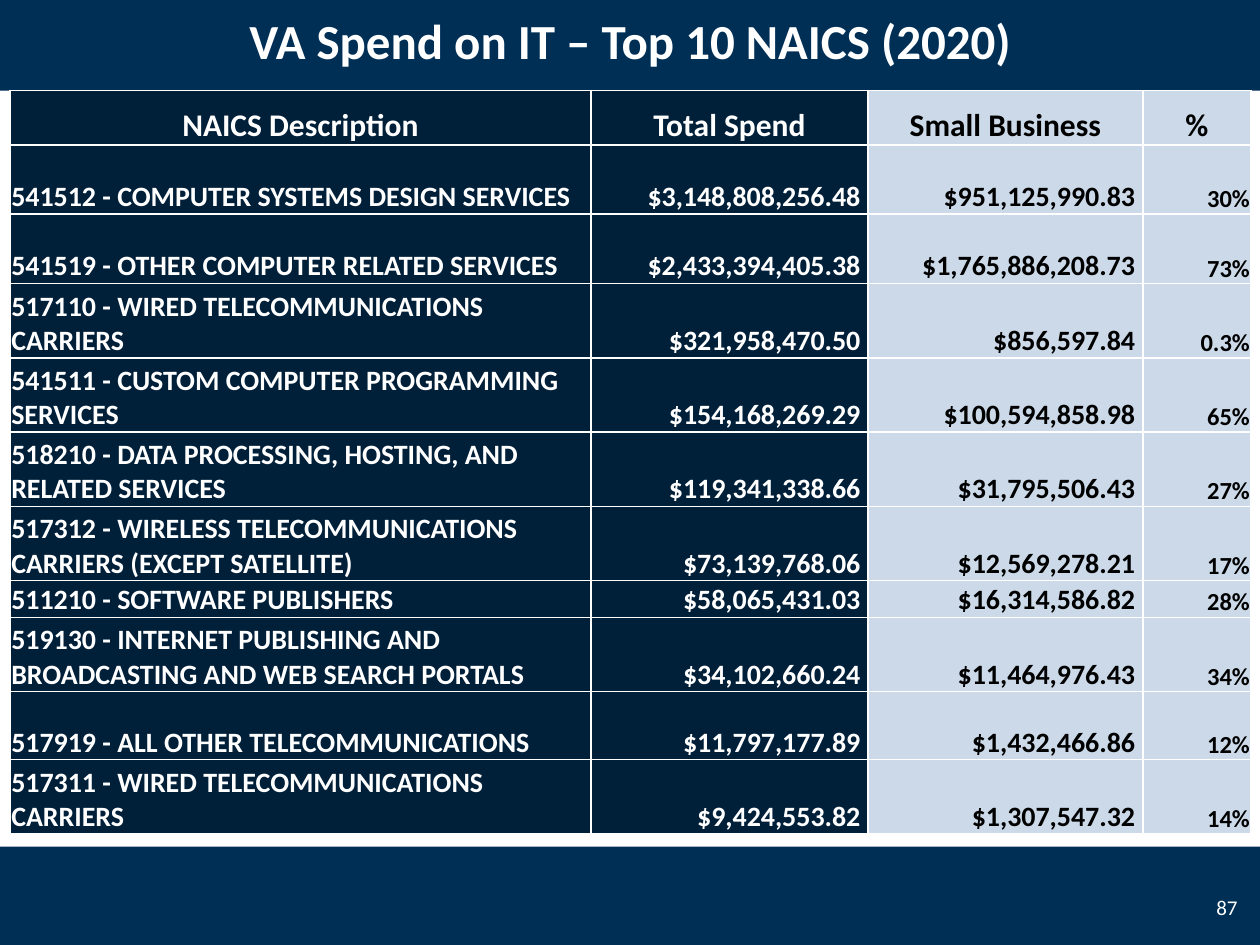
from pptx import Presentation
from pptx.dml.color import RGBColor
from pptx.enum.shapes import MSO_SHAPE as Preset
from pptx.enum.text import MSO_ANCHOR as Anchor, PP_ALIGN as Align
from pptx.oxml import parse_xml
from pptx.oxml.ns import nsdecls
from pptx.util import Inches, Pt

NAVY, DARK, PALE = "002F56", "001F39", "CBD9E8"
WHITE, BLACK = "FFFFFF", "000000"


def color(value):
    return RGBColor.from_string(value)


def write(frame, text, size, ink, align, bold=True):
    frame.word_wrap = True
    paragraph = frame.paragraphs[0]
    paragraph.alignment = align
    run = paragraph.add_run()
    run.text = text
    run.font.name = "Calibri"
    run.font.size = Pt(size)
    run.font.bold = bold
    run.font.color.rgb = color(ink)


presentation = Presentation()
presentation.slide_width, presentation.slide_height = Inches(10), Inches(7.5)
unit = presentation.slide_width // 100
slide = presentation.slides.add_slide(presentation.slide_layouts[5])
title = slide.shapes.title
bar_height = 8 * unit
title_top = int(-0.8 * unit)

for top in (int(67.2 * unit), title_top):
    bar = slide.shapes.add_shape(Preset.RECTANGLE, 0, top, 100 * unit, bar_height)
    bar.shadow.inherit = False
    bar.fill.solid()
    bar.fill.fore_color.rgb = color(NAVY)
    bar.line.fill.background()
    title.element.addprevious(bar.element)

title.left, title.top, title.width, title.height = 0, title_top, 100 * unit, bar_height
title.text_frame.vertical_anchor = Anchor.MIDDLE
write(title.text_frame, "VA Spend on IT – Top 10 NAICS (2020)", 28, WHITE, Align.CENTER)

page_number = slide.shapes.add_textbox(95 * unit, 70 * unit, int(4.2 * unit), 4 * unit)
page_number.text_frame.vertical_anchor = Anchor.MIDDLE
write(page_number.text_frame, "87", 12, WHITE, Align.RIGHT, bold=False)

header = ("NAICS Description", "Total Spend", "Small Business", "%")
spending = [
    ("541512 - COMPUTER SYSTEMS DESIGN SERVICES", "$3,148,808,256.48 ", "$951,125,990.83 ", "30%"),
    ("541519 - OTHER COMPUTER RELATED SERVICES", "$2,433,394,405.38 ", "$1,765,886,208.73 ", "73%"),
    ("517110 - WIRED TELECOMMUNICATIONS CARRIERS", "$321,958,470.50 ", "$856,597.84 ", "0.3%"),
    ("541511 - CUSTOM COMPUTER PROGRAMMING SERVICES", "$154,168,269.29 ", "$100,594,858.98 ", "65%"),
    ("518210 - DATA PROCESSING, HOSTING, AND RELATED SERVICES", "$119,341,338.66 ", "$31,795,506.43 ", "27%"),
    ("517312 - WIRELESS TELECOMMUNICATIONS CARRIERS (EXCEPT SATELLITE)", "$73,139,768.06 ", "$12,569,278.21 ", "17%"),
    ("511210 - SOFTWARE PUBLISHERS", "$58,065,431.03 ", "$16,314,586.82 ", "28%"),
    ("519130 - INTERNET PUBLISHING AND BROADCASTING AND WEB SEARCH PORTALS", "$34,102,660.24 ", "$11,464,976.43 ", "34%"),
    ("517919 - ALL OTHER TELECOMMUNICATIONS", "$11,797,177.89 ", "$1,432,466.86 ", "12%"),
    ("517311 - WIRED TELECOMMUNICATIONS CARRIERS", "$9,424,553.82 ", "$1,307,547.32 ", "14%"),
]
column_widths = (46.1, 22, 21.8, 8.6)
row_heights = (4.3, 5.5, 5.5, 5.9, 5.9, 5.9, 5.9, 2.9, 5.9, 5.4, 5.9)
column_styles = [
    (DARK, WHITE, 16, Align.LEFT),
    (DARK, WHITE, 16, Align.RIGHT),
    (PALE, BLACK, 16, Align.RIGHT),
    (PALE, BLACK, 14, Align.RIGHT),
]

table = slide.shapes.add_table(
    len(row_heights), len(column_widths), int(0.8 * unit), int(7.2 * unit),
    int(sum(column_widths) * unit), int(sum(row_heights) * unit),
).table
for column, width in zip(table.columns, column_widths):
    column.width = int(width * unit)
for row, height in zip(table.rows, row_heights):
    row.height = int(height * unit)

for row_index, values in enumerate([header] + spending):
    for column_index, (text, style) in enumerate(zip(values, column_styles)):
        fill, ink, size, align = style
        if row_index == 0:
            size, align = 18, Align.CENTER
        cell = table.cell(row_index, column_index)
        write(cell.text_frame, text, size, ink, align)
        cell.vertical_anchor = Anchor.BOTTOM
        cell.margin_left = cell.margin_top = cell.margin_right = Inches(0.01)
        cell.margin_bottom = 0
        properties = cell._tc.get_or_add_tcPr()
        for side in ("lnL", "lnR", "lnT", "lnB"):
            properties.append(parse_xml(
                f'<a:{side} {nsdecls("a")} w="{Pt(1)}"><a:solidFill>'
                f'<a:srgbClr val="{WHITE}"/></a:solidFill></a:{side}>'
            ))
        cell.fill.solid()
        cell.fill.fore_color.rgb = color(fill)

presentation.save("out.pptx")
